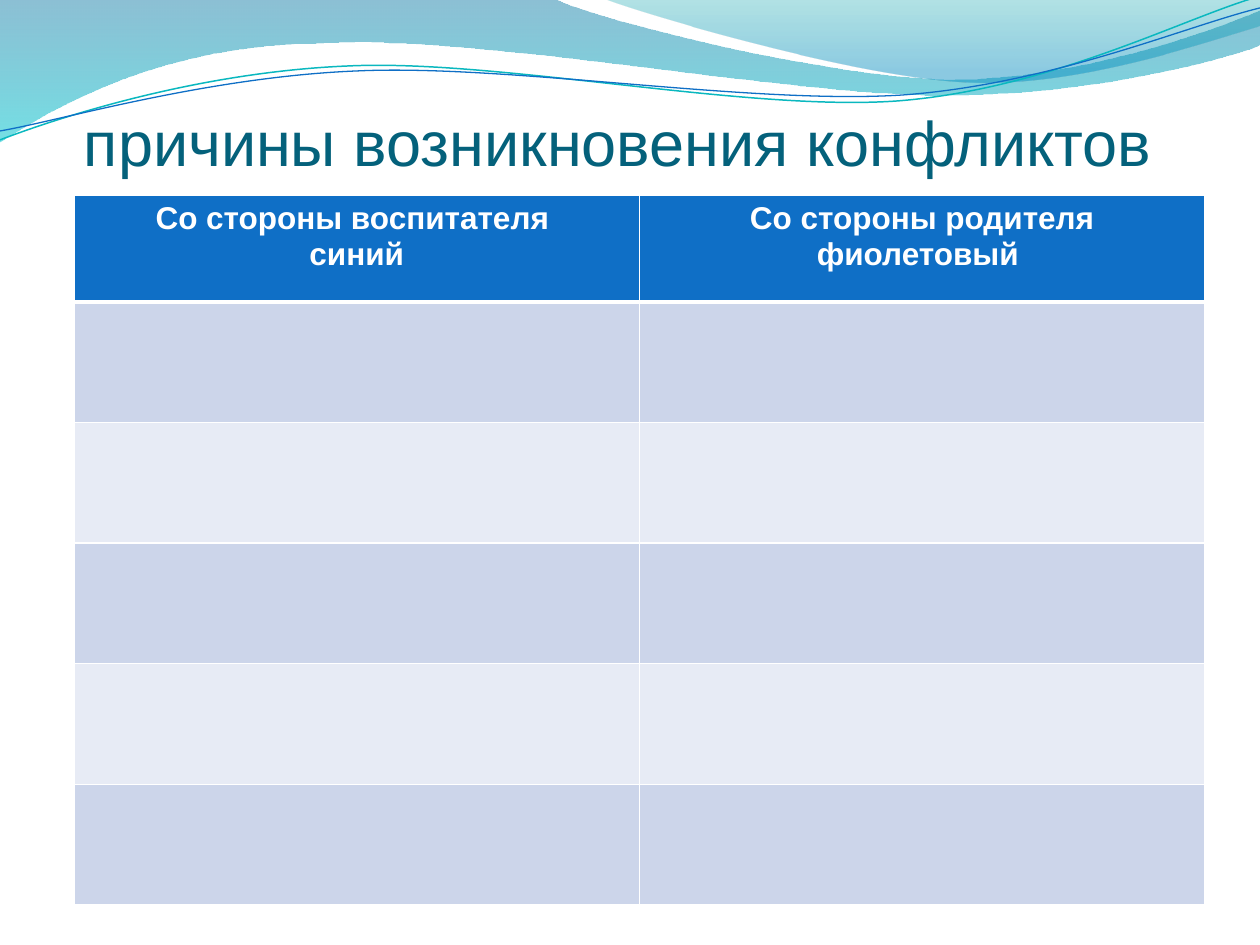
import math

from lxml import etree
from pptx import Presentation
from pptx import util as u
from pptx.dml.color import RGBColor
from pptx.enum import text
from pptx.oxml.ns import qn

PX = 914400 / 126  # EMU per px
BLUE = RGBColor(0x0F, 0x6F, 0xC6)
TEAL = RGBColor(0x0A, 0xB8, 0xBF)
TITLE_COLOR = RGBColor(0x04, 0x61, 0x7B)
WHITE = RGBColor(0xFF, 0xFF, 0xFF)
BANDS = (RGBColor(0xE7, 0xEB, 0xF5), RGBColor(0xCC, 0xD5, 0xEA))
# Gradient stops: position, colour, opacity in percent
BROAD_GRADIENT = ((0, RGBColor(0x00, 0x74, 0xA1), 45),
                  (1, RGBColor(0x00, 0xC6, 0xCF), 55))
RIGHT_GRADIENT = ((0, RGBColor(0x00, 0xA1, 0xA9), 30),
                  (0.8, RGBColor(0x00, 0x8B, 0xBF), 45))
LINE_TILT = -2.7  # degrees

# Outlines: a start point, then lines (one point) or Bezier curves (three)
BROAD_WAVE = [
    [(0, -1)], [(554, -1)],
    [(600, 21), (837, 79), (955, 79)], [(1075, 79), (1207, 33), (1260, 11)],
    [(1261, 45)],
    [(1239, 55), (1096, 96), (940, 95)], [(784, 95), (481, 35), (324, 43)],
    [(163, 44), (58, 105), (-1, 142)], [(0, -1)],
]
RIGHT_WAVE = [
    [(604, -1)],
    [(641, 14), (859, 78), (969, 82)], [(1079, 87), (1211, 40), (1260, 26)],
    [(1260, 0)], [(604, -1)],
]
TEAL_LINE = [
    [(0, 140)],
    [(60, 117), (199, 72), (349, 66)], [(498, 59), (747, 112), (898, 101)],
    [(1050, 89), (1182, 19), (1257, -3)],
]
BLUE_LINE = [
    [(0, 131)],
    [(59, 121), (207, 77), (357, 71)], [(508, 64), (752, 105), (903, 95)],
    [(1053, 84), (1186, 26), (1260, 8)],
]
HEADINGS = (("Со стороны воспитателя ", "синий"),
            ("Со стороны родителя", "фиолетовый "))


def px(length):
    return u.Emu(round(length * PX))


def turn(point, center, degrees):
    angle = math.radians(degrees)
    dx, dy = point[0] - center[0], point[1] - center[1]
    return (center[0] + dx * math.cos(angle) - dy * math.sin(angle),
            center[1] + dx * math.sin(angle) + dy * math.cos(angle))


def add_outline(slide, left, top, segments, close, center=(0, 0), tilt=0):
    """Draw the segments; a tilted outline is laid level, then rotated."""
    points = [turn(point, center, -tilt)
              for segment in segments for point in segment]
    points = [(px(left + x), px(top + y)) for x, y in points]
    builder = slide.shapes.build_freeform(*points[0], scale=1.0)
    builder.add_line_segments(points[1:], close=close)
    outline = builder.convert_to_shape()
    outline.shadow.inherit = False
    outline.rotation = tilt
    steps = iter(list(outline._element.iter(qn("a:lnTo"))))
    for segment in segments[1:]:
        curve = next(steps)
        if len(segment) == 3:
            curve.tag = qn("a:cubicBezTo")
            for _ in range(2):
                step = next(steps)
                curve.append(step[0])
                step.getparent().remove(step)
    return outline


def add_waves(slide, left, top):
    for segments, gradient in ((BROAD_WAVE, BROAD_GRADIENT),
                               (RIGHT_WAVE, RIGHT_GRADIENT)):
        wave = add_outline(slide, left, top, segments, close=True)
        wave.line.fill.background()
        wave.fill.gradient()
        wave.fill.gradient_angle = 270
        for stop, (position, color, _) in zip(wave.fill.gradient_stops, gradient):
            stop.position = position
            stop.color.rgb = color
        colors = wave._element.spPr.iter(qn("a:srgbClr"))
        for color, (_, _, opacity) in zip(colors, gradient):
            etree.SubElement(color, qn("a:alpha"), val=str(opacity * 1000))
    for segments, center, color, width in (
            (TEAL_LINE, (629, 72), TEAL, 0.85),
            (BLUE_LINE, (630, 74), BLUE, 0.75)):
        line = add_outline(slide, left, top, segments, close=False,
                           center=center, tilt=LINE_TILT)
        line.fill.background()
        line.line.color.rgb = color
        line.line.width = u.Pt(width)


def add_run(paragraph, words, size, color, bold=False):
    run = paragraph.add_run()
    run.text = words
    run.font.name = "Arial"
    run.font.size = u.Pt(size)
    run.font.bold = bold
    run.font.color.rgb = color


def place_title(slide, left, top, width, height):
    title = slide.shapes.title
    title.left, title.top, title.width, title.height = map(
        px, (left, top, width, height))
    frame = title.text_frame
    frame.auto_size = text.MSO_AUTO_SIZE.NONE
    frame.word_wrap = True
    frame.vertical_anchor = text.MSO_ANCHOR.BOTTOM
    frame.margin_left, frame.margin_right = px(20), 0
    frame.margin_top, frame.margin_bottom = px(6), px(5)
    paragraph = frame.paragraphs[0]
    paragraph.alignment = text.PP_ALIGN.LEFT
    add_run(paragraph, "причины возникновения конфликтов", 36, TITLE_COLOR)
    slide.shapes._spTree.append(title._element)  # in front of the waves


def set_borders(cell, **widths):
    properties = cell._tc.get_or_add_tcPr()
    for index, side in enumerate("LRTB"):
        border = etree.Element(qn(f"a:ln{side}"),
                               w=str(u.Pt(widths.get(side, 1))))
        fill = etree.SubElement(border, qn("a:solidFill"))
        etree.SubElement(fill, qn("a:srgbClr"), val=str(WHITE))
        properties.insert(index, border)


def add_causes_table(slide, left, top, width, height, header_height, rows):
    table = slide.shapes.add_table(rows + 1, len(HEADINGS), px(left), px(top),
                                   px(width), px(height)).table
    row_height = (height - header_height) / rows
    for index, row in enumerate(table.rows):
        row.height = px(row_height if index else header_height)
        for cell in row.cells:
            cell.fill.solid()
            cell.fill.fore_color.rgb = BANDS[index % 2] if index else BLUE
            set_borders(cell, T=3 if index == 1 else 1, B=1 if index else 3)
    for cell, lines in zip(table.rows[0].cells, HEADINGS):
        frame = cell.text_frame
        for number, words in enumerate(lines):
            paragraph = frame.add_paragraph() if number else frame.paragraphs[0]
            paragraph.alignment = text.PP_ALIGN.CENTER
            add_run(paragraph, words, 18, WHITE, bold=True)


def main():
    presentation = Presentation()
    presentation.slide_width, presentation.slide_height = px(1260), px(945)
    slide = presentation.slides.add_slide(presentation.slide_layouts[5])
    add_waves(slide, 0, 0)
    place_title(slide, 64, 76, 1134, 108)
    add_causes_table(slide, 74, 195, 1131, 710, header_height=107, rows=5)
    presentation.save("out.pptx")


if __name__ == "__main__":
    main()
